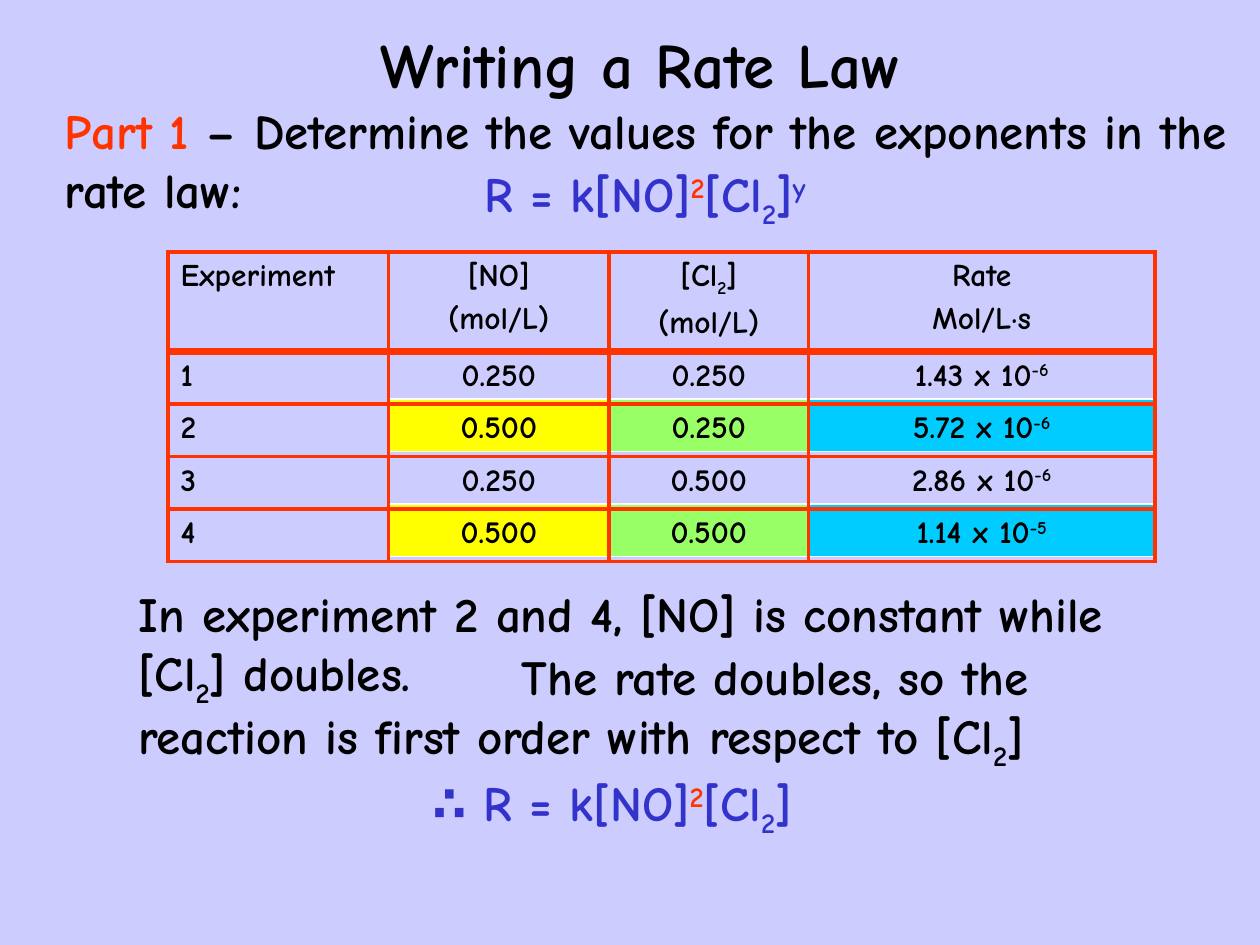
import pptx
import pptx.util
import pptx.dml.color
import pptx.enum.shapes
import pptx.enum.text
import pptx.oxml
import pptx.oxml.ns
from dataclasses import dataclass

Align = pptx.enum.text.PP_ALIGN
Anchor = pptx.enum.text.MSO_ANCHOR
AutoSize = pptx.enum.text.MSO_AUTO_SIZE


@dataclass(frozen=True)
class Theme:
    font: str = "Comic Neue"
    background: str = "CCCCFF"
    text: str = "000000"
    accent: str = "FF3300"
    formula: str = "3333CC"
    highlight_outline: str = "FFFFFF"
    title_size: int = 36
    body_size: int = 28
    table_size: int = 18


THEME = Theme()
SUBSCRIPT, SUPERSCRIPT = -25, 30

# The grid has twelve units to the inch: 120 columns by 90 rows
SLIDE_COLUMNS, SLIDE_ROWS = 120, 90

# Table geometry in grid units
TABLE_LEFT, TABLE_TOP = 16, 24
COLUMN_WIDTHS = [21, 21, 19, 33]
ROW_HEIGHTS = [9, 5, 5, 5, 5]
HIGHLIGHTED_ROWS = [2, 4]
HIGHLIGHTED_COLUMNS = {1: "FFFF00", 2: "99FF66", 3: "00CCFF"}

# A run is a string, or a tuple of text, baseline and an optional colour
CL2 = ["[Cl", ("2", SUBSCRIPT), "]"]
RATE_LAW = ["R = k[NO]", ("2", SUPERSCRIPT, THEME.accent)] + CL2


def power(factor, exponent):
    return [[f"{factor} x 10", (exponent, SUPERSCRIPT)]]


# Each cell is a list of paragraphs, each paragraph a list of runs
TABLE = [
    [[["Experiment"]], [["[NO]"], ["(mol/L)"]], [CL2, ["(mol/L)"]],
     [["Rate"], ["Mol/L·s"]]],
    [[["1"]], [["0.250"]], [["0.250"]], power("1.43", "-6")],
    [[["2"]], [["0.500"]], [["0.250"]], power("5.72", "-6")],
    [[["3"]], [["0.250"]], [["0.500"]], power("2.86", "-6")],
    [[["4"]], [["0.500"]], [["0.500"]], power("1.14", "-5")],
]


def grid(units):
    return pptx.util.Inches(units / 12)


def rgb(value):
    return pptx.dml.color.RGBColor.from_string(value)


def write_text(frame, paragraphs, size=THEME.body_size, color=THEME.text,
               align=Align.LEFT, space_before=0, indent=0):
    """Fill a text frame with paragraphs of formatted runs."""
    for index, runs in enumerate(paragraphs):
        paragraph = frame.paragraphs[0] if index == 0 else frame.add_paragraph()
        paragraph.alignment = align
        paragraph.space_before = pptx.util.Pt(space_before)
        if indent:
            paragraph._p.get_or_add_pPr().set("indent", str(grid(indent)))
        for item in runs:
            text, baseline, run_color = (
                (item, 0, color) if isinstance(item, str) else (*item, color)[:3])
            run = paragraph.add_run()
            run.text = text
            run.font.name = THEME.font
            run.font.size = pptx.util.Pt(size)
            run.font.bold = True
            run.font.color.rgb = rgb(run_color)
            if baseline:
                run.font._element.set("baseline", str(baseline * 1000))


def add_title(slide, text, left, top, width, height):
    title = slide.shapes.title
    title.left, title.top = grid(left), grid(top)
    title.width, title.height = grid(width), grid(height)
    frame = title.text_frame
    frame.auto_size = AutoSize.NONE
    frame.vertical_anchor = Anchor.MIDDLE
    write_text(frame, [[text]], size=THEME.title_size, align=Align.CENTER)


def add_text(slide, runs, left, top, width, height, wrap=True, **text_format):
    box = slide.shapes.add_textbox(grid(left), grid(top), grid(width), grid(height))
    frame = box.text_frame
    frame.word_wrap = wrap
    frame.auto_size = AutoSize.SHAPE_TO_FIT_TEXT
    write_text(frame, [runs], **text_format)


def add_highlights(slide):
    """Put coloured blocks behind the compared cells."""
    for row in HIGHLIGHTED_ROWS:
        for column, color in HIGHLIGHTED_COLUMNS.items():
            block = slide.shapes.add_shape(
                pptx.enum.shapes.MSO_SHAPE.RECTANGLE,
                grid(TABLE_LEFT + sum(COLUMN_WIDTHS[:column])),
                grid(TABLE_TOP + sum(ROW_HEIGHTS[:row])),
                grid(COLUMN_WIDTHS[column]), grid(ROW_HEIGHTS[row]))
            block.shadow.inherit = False
            block.fill.solid()
            block.fill.fore_color.rgb = rgb(color)
            block.line.color.rgb = rgb(THEME.highlight_outline)
            block.line.width = pptx.util.Pt(0.75)


def set_borders(cell, **widths):
    """Draw the cell's edges, given as lnL, lnR, lnT and lnB in points."""
    properties = cell._tc.get_or_add_tcPr()
    for edge, width in widths.items():
        properties.append(pptx.oxml.parse_xml(
            f'<a:{edge} {pptx.oxml.ns.nsdecls("a")} w="{pptx.util.Pt(width)}">'
            f'<a:solidFill><a:srgbClr val="{THEME.accent}"/></a:solidFill>'
            f'</a:{edge}>'))


def add_table(slide):
    table = slide.shapes.add_table(
        len(ROW_HEIGHTS), len(COLUMN_WIDTHS), grid(TABLE_LEFT), grid(TABLE_TOP),
        grid(sum(COLUMN_WIDTHS)), grid(sum(ROW_HEIGHTS))).table
    table.first_row = table.horz_banding = False
    for column, width in zip(table.columns, COLUMN_WIDTHS):
        column.width = grid(width)
    for row, height in zip(table.rows, ROW_HEIGHTS):
        row.height = grid(height)
    thin, thick = 2.25, 4.5
    for row, contents in enumerate(TABLE):
        for column, paragraphs in enumerate(contents):
            cell = table.cell(row, column)
            set_borders(cell, lnL=thin, lnR=thin,
                        lnT=thick if row == 1 else thin,
                        lnB=thick if row == 0 else thin)
            cell.fill.background()
            write_text(cell.text_frame, paragraphs, size=THEME.table_size,
                       align=Align.CENTER if column else Align.LEFT,
                       space_before=THEME.table_size * 0.2)


def main():
    presentation = pptx.Presentation()
    presentation.slide_width = grid(SLIDE_COLUMNS)
    presentation.slide_height = grid(SLIDE_ROWS)
    slide = presentation.slides.add_slide(presentation.slide_layouts[5])
    slide.background.fill.solid()
    slide.background.fill.fore_color.rgb = rgb(THEME.background)

    # Heading and task
    add_title(slide, "Writing a Rate Law", 9, 0, 104, 12)
    add_text(slide, [("Part 1 ", 0, THEME.accent),
                     "– Determine the values for the exponents in the rate law:"],
             5, 9, 115, 12.4)

    # Experimental data
    add_highlights(slide)
    add_table(slide)

    # Rate law, reasoning and conclusion
    add_text(slide, RATE_LAW + [("y", SUPERSCRIPT)], 45, 15, 39.1, 6.8,
             wrap=False, color=THEME.formula)
    add_text(slide, ["In experiment 2 and 4, [NO] is constant while ", *CL2,
                     " doubles."], 12, 55, 104.2, 12.4)
    add_text(slide, ["The rate doubles, so the reaction is first order "
                     "with respect to ", *CL2], 12, 61, 97, 18, indent=36.5)
    add_text(slide, ["∴ "] + RATE_LAW, 40, 73, 43.4, 6.8,
             wrap=False, color=THEME.formula)
    presentation.save("out.pptx")


if __name__ == "__main__":
    main()
